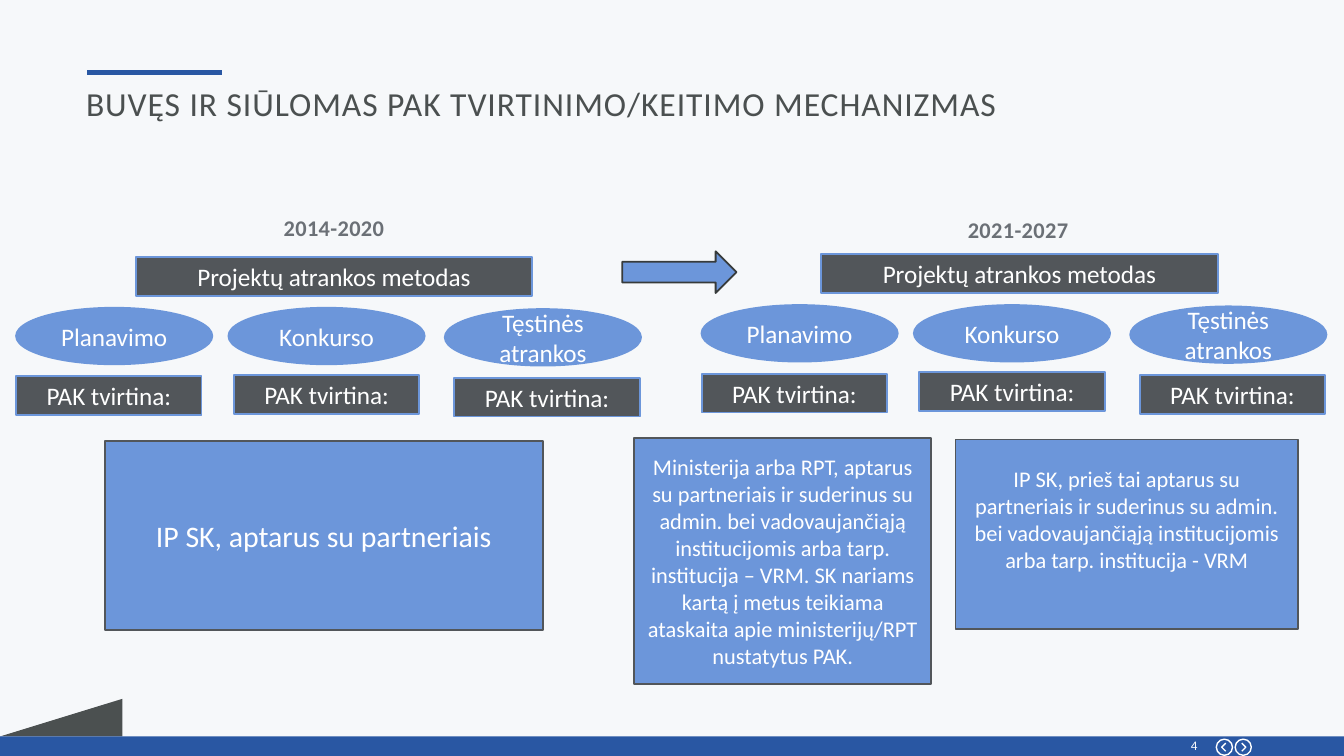
from pptx import Presentation
from pptx.dml.color import RGBColor
from pptx.enum.shapes import MSO_CONNECTOR, MSO_SHAPE
from pptx.enum.text import MSO_ANCHOR, PP_ALIGN
from pptx.oxml.ns import qn
from pptx.util import Inches, Pt
from lxml import etree

RECT, OVAL, ARROW = MSO_SHAPE.RECTANGLE, MSO_SHAPE.OVAL, MSO_SHAPE.RIGHT_ARROW
TOP, MIDDLE = MSO_ANCHOR.TOP, MSO_ANCHOR.MIDDLE
LEFT, CENTER, RIGHT = PP_ALIGN.LEFT, PP_ALIGN.CENTER, PP_ALIGN.RIGHT
FONT = "Calibri"
BLUE, NAVY, GREY, DARK, WHITE = "6C96DA", "2957A3", "52565A", "4B5050", "FFFFFF"


def rgb(color):
    return RGBColor.from_string(color)


def write(sp, text, size=13.5, color=WHITE, bold=False, align=CENTER, anchor=MIDDLE,
          inset=None, spacing=None, line=None, after=None):
    """Fill a shape with one formatted paragraph; spacing is between letters, in points."""
    tf = sp.text_frame
    tf.word_wrap = True
    tf.vertical_anchor = anchor
    if inset is not None:
        tf.margin_left = tf.margin_right = tf.margin_top = tf.margin_bottom = Inches(inset)
    p = tf.paragraphs[0]
    p.alignment = align
    if line:
        p.line_spacing = Pt(line)
    if after:
        p.space_after = Pt(after)
    r = p.add_run()
    r.text = text
    r.font.name, r.font.size, r.font.bold = FONT, Pt(size), bold
    r.font.color.rgb = rgb(color)
    if spacing:
        r._r.get_or_add_rPr().set("spc", str(round(spacing * 100)))


def paint(sp, fill=None, line=None, width=1):
    sp.shadow.inherit = False
    if fill:
        sp.fill.solid()
        sp.fill.fore_color.rgb = rgb(fill)
    else:
        sp.fill.background()
    if line:
        sp.line.color.rgb = rgb(line)
        sp.line.width = Pt(width)
    else:
        sp.line.fill.background()


def add_box(s, kind, x, y, w, h, fill=None, line=None, text=None, width=1, **fmt):
    sp = s.shapes.add_shape(kind, Inches(x), Inches(y), Inches(w), Inches(h))
    paint(sp, fill, line, width)
    if text:
        write(sp, text, **fmt)
    return sp


def add_label(s, x, y, w, h, text, **fmt):
    write(s.shapes.add_textbox(Inches(x), Inches(y), Inches(w), Inches(h)), text, **fmt)


def add_outline(s, points, closed, **colors):
    points = [(Inches(x), Inches(y)) for x, y in points]
    builder = s.shapes.build_freeform(*points[0])
    builder.add_line_segments(points[1:], close=closed)
    paint(builder.convert_to_shape(), **colors)


def add_nav_button(s, x, y, size, direction):
    """Ringed chevron pointing left (-1) or right (1)."""
    add_box(s, OVAL, x, y, size, size, line=WHITE, width=0.75)
    cx, cy = x + size / 2, y + size / 2
    tail, tip = cx - 0.01 * direction, cx + 0.02 * direction
    add_outline(s, [(tail, cy - 0.03), (tip, cy), (tail, cy + 0.03)], False,
                line=WHITE, width=0.75)


def add_footer(s, x, y, w, h):
    add_outline(s, [(x, y), (x + 0.91, y - 0.28), (x + 0.91, y)], True, fill=DARK)
    add_box(s, RECT, x, y, w, h, fill=NAVY)
    add_label(s, x + 8.68, y + 0.01, 0.23, 0.12, "4", size=7, align=RIGHT, anchor=TOP,
              inset=0, spacing=0.3)
    add_nav_button(s, x + 9.05, y + 0.02, 0.12, -1)
    add_nav_button(s, x + 9.19, y + 0.02, 0.12, 1)


def add_heading(s, x, y, w, h, text):
    rule = s.shapes.add_connector(MSO_CONNECTOR.STRAIGHT, Inches(x + 0.01), Inches(y - 0.08),
                                  Inches(x + 1.01), Inches(y - 0.08))
    rule.line.color.rgb = rgb(NAVY)
    rule.line.width = Pt(2.25)
    etree.SubElement(rule._element.spPr, qn("a:effectLst"))
    title = s.shapes.title
    title.left, title.top, title.width, title.height = map(Inches, (x, y, w, h))
    write(title, text, size=18, color=DARK, align=LEFT, anchor=TOP, inset=0, spacing=0.5)


def add_period(s, x, y, period, label_x, label_y):
    """Selection methods of one funding period, with the label for who approves below each."""
    add_label(s, label_x, label_y, 1.11, 0.32, period, size=12, color="6B7076", bold=True,
              anchor=TOP, spacing=0.2, line=17, after=6)
    add_box(s, RECT, x + 0.89, y, 2.95, 0.29, GREY, BLUE, "Projektų atrankos metodas")
    methods = [("Planavimo", 0, 0.38, 0, 0.89),
               ("Konkurso", 1.58, 0.38, 1.62, 0.88),
               ("Tęstinės atrankos", 3.19, 0.39, 3.26, 0.9)]
    for method, oval_x, oval_y, tag_x, tag_y in methods:
        add_box(s, OVAL, x + oval_x, y + oval_y, 1.46, 0.42, BLUE, BLUE, method)
        add_box(s, RECT, x + tag_x, y + tag_y, 1.38, 0.29, GREY, BLUE, "PAK tvirtina:")


def add_approver(s, x, y, w, h, text, size=12):
    return add_box(s, RECT, x, y, w, h, BLUE, GREY, text, size=size)


def main():
    prs = Presentation()
    prs.slide_width = Inches(10)
    prs.slide_height = prs.slide_width * 9 // 16
    s = prs.slides.add_slide(prs.slide_layouts[5])
    s.background.fill.solid()
    s.background.fill.fore_color.rgb = rgb("F6F8FA")

    add_footer(s, 0, 5.48, 10, 0.15)
    add_heading(s, 0.64, 0.62, 7.24, 0.42,
                "BUVĘS IR SIŪLOMAS PAK TVIRTINIMO/KEITIMO MECHANIZMAS")
    add_period(s, 0.12, 1.91, "2014-2020", 1.93, 1.51)
    add_period(s, 5.22, 1.89, "2021-2027", 7.02, 1.52)
    add_box(s, ARROW, 4.63, 1.87, 0.85, 0.31, BLUE, "373B3B")

    add_approver(s, 0.78, 3.28, 3.26, 1.41, "IP SK, aptarus su partneriais", size=16)
    add_approver(s, 4.72, 3.26, 2.21, 1.83,
                 "Ministerija arba RPT, aptarus su partneriais ir suderinus su admin. bei "
                 "vadovaujančiąją institucijomis arba tarp. institucija – VRM. SK nariams kartą "
                 "į metus teikiama ataskaita apie ministerijų/RPT nustatytus PAK.")
    council = add_approver(s, 7.11, 3.27, 2.55, 1.41,
                           "IP SK, prieš tai aptarus su partneriais ir suderinus su admin. bei "
                           "vadovaujančiąją institucijomis arba tarp. institucija - VRM")
    council.text_frame.margin_bottom = Inches(0.28)
    prs.save("out.pptx")


if __name__ == "__main__":
    main()
